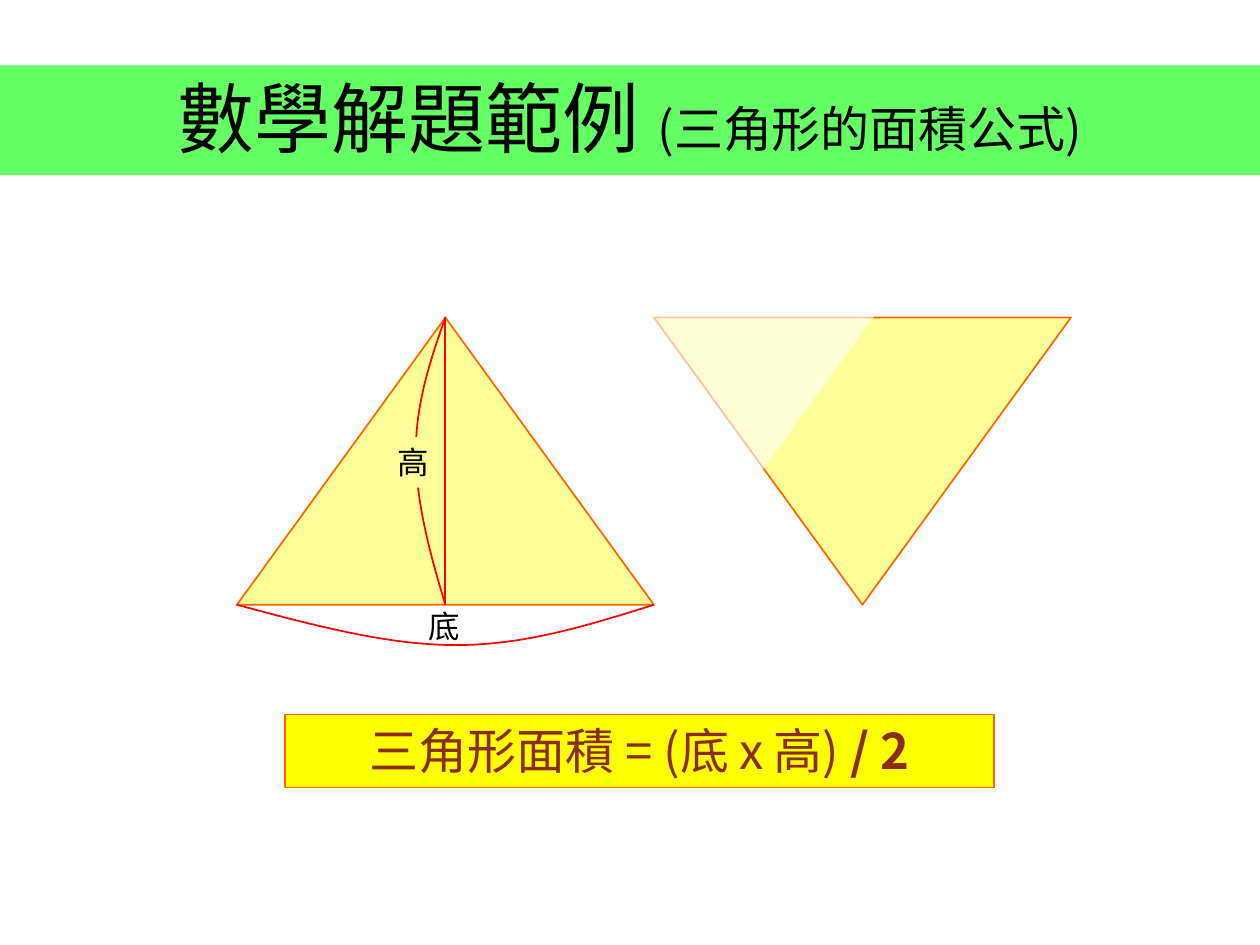
"""Build a slide that explains the triangle area formula."""
from lxml.etree import SubElement
from pptx import Presentation
from pptx.dml.color import RGBColor
from pptx.enum.shapes import MSO_CONNECTOR, MSO_SHAPE as Shape
from pptx.enum.text import MSO_ANCHOR as Anchor, MSO_AUTO_SIZE as AutoSize, PP_ALIGN as Align
from pptx.oxml.ns import qn
from pptx.util import Inches, Pt

THEME = {
    "black": "000000", "band": "00FF00", "formula_fill": "FFFF00", "formula_text": "8B2C18",
    "triangle": "FFFF99", "outline": "FF6600", "measure": "FF0000", "veil": "FFFFFF",
    "sans_sc": "Noto Sans CJK SC", "sans_jp": "Noto Sans CJK JP",
    "title": 44, "large": 28, "medium": 24, "label": 18, "line": 1,
}

TITLE = [("數學解題範例 ", "title", False), ("(三角形的面積公式)", "large", False)]
FORMULA = [("三角形面積 = (底 x", "large", False), (" ", "medium", False),
           ("高) ", "large", False), ("/ 2", "large", True)]
HEIGHT_LABEL = [("高", "label", False)]
BASE_LABEL = [("底", "label", False)]

LEFT, TOP, BASE, HEIGHT = 1.88, 2.52, 3.31, 2.28
RIGHT, BOTTOM, APEX = LEFT + BASE, TOP + HEIGHT, LEFT + BASE / 2
HEIGHT_CURVE = [((APEX, TOP), (3.41, 2.87), (3.3, 3.21), (3.3, 3.59)),
                ((3.3, 3.59), (3.3, 3.97), (3.41, 4.39), (APEX, BOTTOM))]
BASE_CURVE = [((LEFT, BOTTOM), (2.48, 4.96), (3.07, 5.12), (3.62, 5.12)),
              ((3.62, 5.12), (4.17, 5.12), (4.68, 4.96), (RIGHT, BOTTOM))]
CURVE_STEPS = 24


def color(name):
    return RGBColor.from_string(THEME[name])


def set_line(part, name):
    part.line.color.rgb = color(name)
    part.line.width = Pt(THEME["line"])


def add_solid(shapes, kind, box, fill, outline=None, opacity=None):
    solid = shapes.add_shape(kind, *map(Inches, box))
    solid.shadow.inherit = False
    solid.fill.solid()
    solid.fill.fore_color.rgb = color(fill)
    if opacity:
        rgb = solid.element.spPr.find(qn("a:solidFill"))[0]
        SubElement(rgb, qn("a:alpha"), val=str(opacity * 1000))
    if outline:
        set_line(solid, outline)
    else:
        solid.line.fill.background()
    return solid


def add_triangle(shapes, box, fill, outline=None, opacity=None, flipped=False):
    triangle = add_solid(shapes, Shape.ISOSCELES_TRIANGLE, box, fill, outline, opacity)
    if flipped:
        triangle.element.spPr.find(qn("a:xfrm")).set("flipV", "1")


def write(part, runs, ink, typeface, align, **frame_format):
    frame = part.text_frame
    for key, value in frame_format.items():
        setattr(frame, key, value)
    paragraph = frame.paragraphs[0]
    paragraph.alignment = align
    for text, size, bold in runs:
        run = paragraph.add_run()
        run.text = text
        for key, value in {"size": Pt(THEME[size]), "bold": bold, "name": THEME[typeface]}.items():
            setattr(run.font, key, value)
        run.font.color.rgb = color(ink)
        SubElement(run.font._element, qn("a:ea"), typeface=THEME[typeface])


def bezier(p0, p1, p2, p3, t):
    s = 1 - t
    return [Inches(s**3 * a + 3 * s * s * t * b + 3 * s * t * t * c + t**3 * d)
            for a, b, c, d in zip(p0, p1, p2, p3)]


def add_curve(shapes, segments):
    points = [bezier(*segment, step / CURVE_STEPS)
              for segment in segments for step in range(CURVE_STEPS + 1)]
    builder = shapes.build_freeform(*points[0])
    builder.add_line_segments(points[1:], close=False)
    curve = builder.convert_to_shape()
    curve.shadow.inherit = False
    curve.fill.background()
    set_line(curve, "measure")


def main():
    prs = Presentation()
    prs.slide_width, prs.slide_height = Inches(10), Inches(7.5)
    slide = prs.slides.add_slide(prs.slide_layouts[5])
    shapes = slide.shapes
    grow = {"auto_size": AutoSize.SHAPE_TO_FIT_TEXT, "vertical_anchor": Anchor.TOP}
    label = {**grow, "word_wrap": False}

    band = add_solid(shapes, Shape.PARALLELOGRAM, (-0.28, 0.52, 10.63, 0.87), "band", opacity=61)
    band.adjustments[0] = 0.18
    title = shapes.title
    title.element.addprevious(band.element)
    title.left, title.top, title.width, title.height = map(Inches, (0.5, 0.3, 9, 1.25))
    write(title, TITLE, "black", "sans_sc", Align.CENTER, vertical_anchor=Anchor.MIDDLE)

    formula = add_solid(shapes, Shape.RECTANGLE, (2.26, 5.67, 5.63, 0.58), "formula_fill", "outline")
    write(formula, FORMULA, "formula_text", "sans_jp", Align.CENTER, word_wrap=True, **grow)

    add_triangle(shapes, (LEFT, TOP, BASE, HEIGHT), "triangle", "outline")

    height_mark = shapes.add_group_shape().shapes
    altitude = height_mark.add_connector(
        MSO_CONNECTOR.STRAIGHT, *map(Inches, (APEX, TOP, APEX, BOTTOM)))
    set_line(altitude, "measure")
    SubElement(altitude.element.spPr, qn("a:effectLst"))
    add_curve(height_mark, HEIGHT_CURVE)
    height_label = add_solid(height_mark, Shape.RECTANGLE, (3.06, 3.47, 0.45, 0.4), "triangle")
    write(height_label, HEIGHT_LABEL, "black", "sans_sc", Align.LEFT, **label)

    base_mark = shapes.add_group_shape().shapes
    add_curve(base_mark, BASE_CURVE)
    base_label = base_mark.add_textbox(*map(Inches, (3.3, 4.77, 0.45, 0.41)))
    write(base_label, BASE_LABEL, "black", "sans_sc", Align.LEFT, **label)

    add_triangle(shapes, (RIGHT, TOP, BASE, HEIGHT), "triangle", "outline", flipped=True)
    add_triangle(shapes, (3.53, 2.48, 3.43, 2.36), "veil", opacity=60, flipped=True)

    prs.save("out.pptx")


if __name__ == "__main__":
    main()
